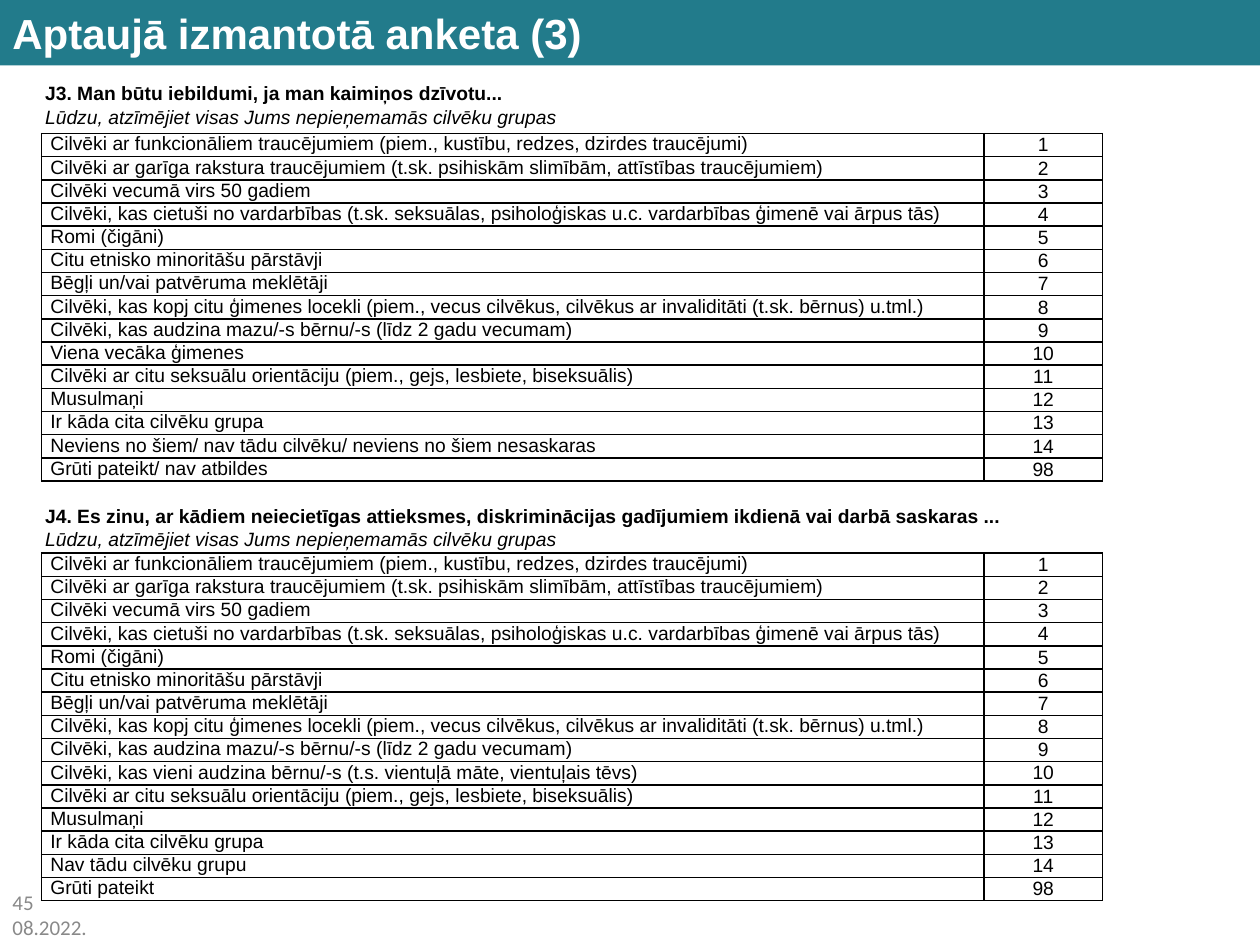
from lxml import etree
from pptx import Presentation
from pptx.dml.color import RGBColor
from pptx.enum.shapes import MSO_SHAPE
from pptx.enum.text import MSO_ANCHOR, PP_ALIGN
from pptx.oxml.ns import qn
from pptx.util import Inches, Pt

RECT = MSO_SHAPE.RECTANGLE
TOP, MIDDLE = MSO_ANCHOR.TOP, MSO_ANCHOR.MIDDLE
LEFT, CENTER, JUSTIFY = PP_ALIGN.LEFT, PP_ALIGN.CENTER, PP_ALIGN.JUSTIFY

COLORS = {"teal": "227B8B", "white": "FFFFFF", "black": "000000", "gray": "898989"}
HINT = "Lūdzu, atzīmējiet visas Jums nepieņemamās cilvēku grupas"
GROUPS = [
    "Cilvēki ar funkcionāliem traucējumiem (piem., kustību, redzes, dzirdes traucējumi)",
    "Cilvēki ar garīga rakstura traucējumiem (t.sk. psihiskām slimībām, attīstības traucējumiem)",
    "Cilvēki vecumā virs 50 gadiem",
    "Cilvēki, kas cietuši no vardarbības (t.sk. seksuālas, psiholoģiskas u.c. vardarbības ģimenē vai ārpus tās)",
    "Romi (čigāni)",
    "Citu etnisko minoritāšu pārstāvji",
    "Bēgļi un/vai patvēruma meklētāji",
    "Cilvēki, kas kopj citu ģimenes locekli (piem., vecus cilvēkus, cilvēkus ar invaliditāti (t.sk. bērnus) u.tml.)",
    "Cilvēki, kas audzina mazu/-s bērnu/-s (līdz 2 gadu vecumam)",
    "{single}",
    "Cilvēki ar citu seksuālu orientāciju (piem., gejs, lesbiete, biseksuālis)",
    "Musulmaņi",
    "Ir kāda cita cilvēku grupa",
    "{none}",
    "{unsure}",
]
CODES = [*range(1, 15), 98]
FIRST_JUSTIFIED = 12


class Deck:
    """Hold the style and the current slide."""

    def __init__(self):
        self.prs = Presentation()
        self.prs.slide_width, self.prs.slide_height = Inches(10), Inches(7.5)
        self.slide = self.prs.slides.add_slide(self.prs.slide_layouts[6])
        self.shapes = self.slide.shapes

    def color(self, name):
        return RGBColor.from_string(COLORS[name])

    def style(self, para, size=11, color="black", face="Arial", align=LEFT):
        para.alignment = align
        font = para.font
        font.size, font.name = Pt(size), face
        font.color.rgb = self.color(color)
        return font

    def banner(self, text):
        bar = self.shapes.add_shape(RECT, 0, 0, Inches(10), Inches(0.52))
        bar.shadow.inherit = False
        bar.fill.solid()
        bar.fill.fore_color.rgb = self.color("teal")
        bar.line.fill.background()
        frame = bar.text_frame
        frame.vertical_anchor = MIDDLE
        frame.text = text
        self.style(frame.paragraphs[0], 24, "white").bold = True

    def text(self, box, paras, **look):
        frame = self.shapes.add_textbox(*map(Inches, box)).text_frame
        frame.word_wrap = True
        for i, runs in enumerate(paras):
            para = frame.add_paragraph() if i else frame.paragraphs[0]
            self.style(para, **look)
            for text, bold, italic in runs:
                run = para.add_run()
                run.text = text
                run.font.bold, run.font.italic = bold, italic

    def border(self, cell):
        props = cell._tc.get_or_add_tcPr()
        for i, side in enumerate(("lnL", "lnR", "lnT", "lnB")):
            line = etree.Element(qn(f"a:{side}"), w=str(Pt(1)))
            fill = etree.SubElement(line, qn("a:solidFill"))
            etree.SubElement(fill, qn("a:srgbClr"), val=COLORS["black"])
            props.insert(i, line)

    def cell(self, cell, text, anchor, align):
        cell.fill.background()
        cell.margin_left = cell.margin_right = Inches(0.07)
        cell.margin_top = cell.margin_bottom = 0
        cell.vertical_anchor = anchor
        cell.text = text
        self.style(cell.text_frame.paragraphs[0], align=align)
        self.border(cell)

    def table(self, top, labels):
        box = map(Inches, (0.33, top, 8.42, 2.75))
        table = self.shapes.add_table(len(labels), 2, *box).table
        table.first_row = table.horz_banding = False
        for col, width in zip(table.columns, (7.48, 0.94)):
            col.width = Inches(width)
        for i, (label, code) in enumerate(zip(labels, CODES)):
            align = JUSTIFY if i >= FIRST_JUSTIFIED else LEFT
            self.cell(table.cell(i, 0), label, TOP, align)
            self.cell(table.cell(i, 1), str(code), MIDDLE, CENTER)


def main():
    deck = Deck()
    footer = [[("45", False, False)], [("08.2022.", False, False)]]
    deck.text((0, 7.01, 1.28, 0.49), footer, size=12, color="gray", face="Calibri")
    deck.banner("Aptaujā izmantotā anketa (3)")

    hint = (HINT, False, True)
    live = ("J3. Man būtu iebildumi, ja man kaimiņos dzīvotu...", True, False)
    know = ("J4. Es zinu, ar kādiem neiecietīgas attieksmes, diskriminācijas "
            "gadījumiem ikdienā vai darbā saskaras ... ", True, False)
    blocks = [
        (0.6, 1.06, [[live], [hint]], {
            "single": "Viena vecāka ģimenes",
            "none": "Neviens no šiem/ nav tādu cilvēku/ neviens no šiem nesaskaras",
            "unsure": "Grūti pateikt/ nav atbildes"}),
        (3.95, 4.39, [[know, hint]], {
            "single": "Cilvēki, kas vieni audzina bērnu/-s (t.s. vientuļā māte, vientuļais tēvs)",
            "none": "Nav tādu cilvēku grupu",
            "unsure": "Grūti pateikt"}),
    ]
    for head, top, paras, words in blocks:
        deck.text((0.26, head, 8.03, 0.47), paras)
        deck.table(top, [group.format(**words) for group in GROUPS])
    deck.prs.save("out.pptx")


if __name__ == "__main__":
    main()
